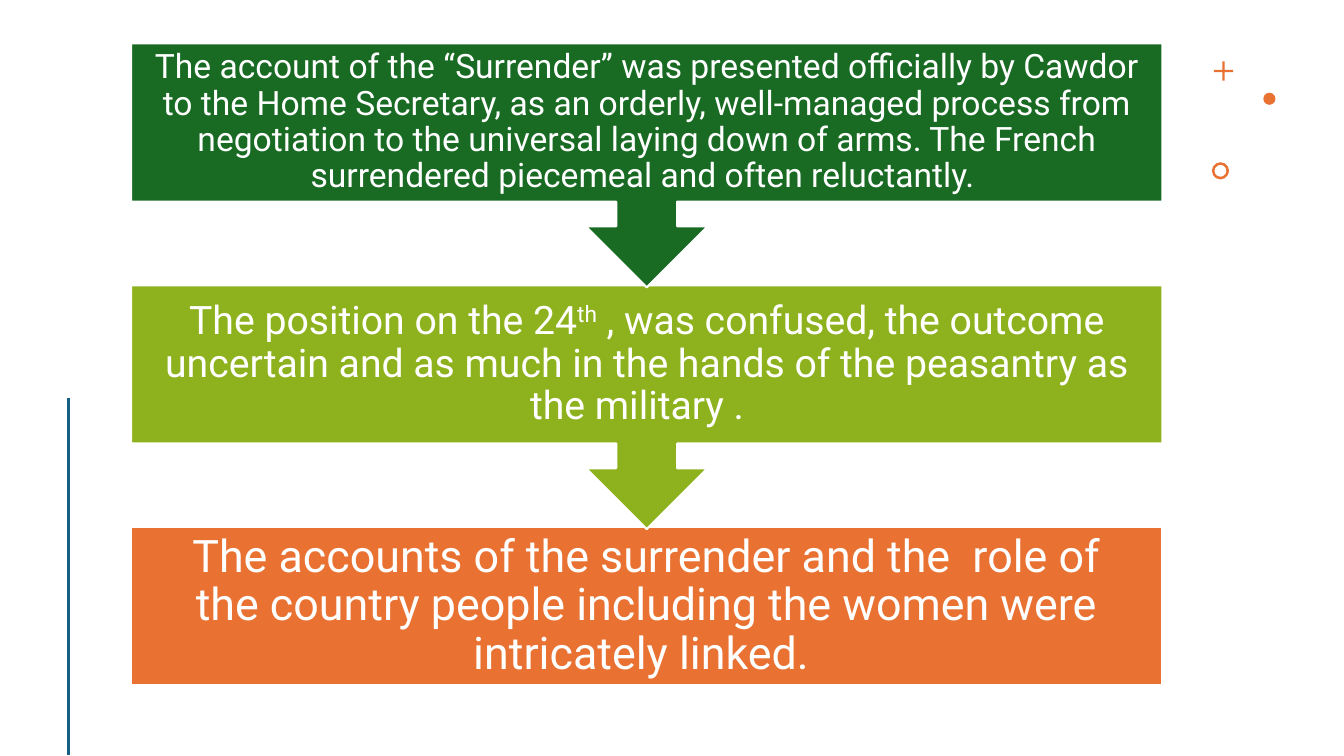
import pptx
import pptx.dml.color
import pptx.enum.shapes
import pptx.enum.text
import pptx.util
from lxml import etree
from pptx.enum.shapes import MSO_SHAPE
from pptx.util import Inches, Pt

WHITE = pptx.dml.color.RGBColor(0xFF, 0xFF, 0xFF)
GREEN = pptx.dml.color.RGBColor(0x19, 0x6B, 0x24)
LIME = pptx.dml.color.RGBColor(0x8E, 0xB2, 0x1E)
ORANGE = pptx.dml.color.RGBColor(0xE9, 0x71, 0x32)
BLUE = pptx.dml.color.RGBColor(0x15, 0x60, 0x82)

STEP_LEFT, STEP_TOP, STEP_WIDTH, STEP_PITCH = 1.3, 0.43, 10.23, 2.4
BOX_HEIGHT, CALLOUT_HEIGHT = 1.57, 2.42

# Fill, text size, inset and text runs; every second run is superscript.
STEPS = [
    (GREEN, 24, 0.19, [
        "The account of the “Surrender” was presented officially by Cawdor to the "
        "Home Secretary, as an orderly, well-managed process from negotiation to the "
        "universal laying down of arms. The French surrendered piecemeal and often "
        "reluctantly. "]),
    (LIME, 28, 0.22, [
        "The position on the 24", "th",
        " , was confused, the outcome uncertain and as much in the hands of the "
        "peasantry as the military .  "]),
    (ORANGE, 32, 0.25, [
        "The accounts of the surrender and the  role of the country people including "
        "the women were intricately linked. "]),
]


def add_filled_shape(slide, preset, left, top, width, height, fill):
    shape = slide.shapes.add_shape(
        preset, Inches(left), Inches(top), Inches(width), Inches(height))
    shape.shadow.inherit = False
    shape.fill.solid()
    shape.fill.fore_color.rgb = fill
    shape.line.fill.background()
    return shape


def write_step_text(step, size, inset, texts):
    frame = step.text_frame
    frame.word_wrap = True
    frame.vertical_anchor = pptx.enum.text.MSO_ANCHOR.MIDDLE
    frame.margin_left = frame.margin_right = Inches(inset)
    frame.margin_top = frame.margin_bottom = Inches(inset)
    paragraph = frame.paragraphs[0]
    paragraph.alignment = pptx.enum.text.PP_ALIGN.CENTER
    paragraph.line_spacing = 0.9
    for position, text in enumerate(texts):
        run = paragraph.add_run()
        run.text = text
        run.font.name = "Roboto"
        run.font.size = Pt(size)
        run.font.color.rgb = WHITE
        if position % 2:
            run.font._element.set("baseline", "30000")


def add_step(slide, index):
    """Add one step: a callout pointing to the next step, or a plain box at the end."""
    fill, size, inset, texts = STEPS[index]
    is_last = index == len(STEPS) - 1
    preset = MSO_SHAPE.RECTANGLE if is_last else MSO_SHAPE.DOWN_ARROW_CALLOUT
    height = BOX_HEIGHT if is_last else CALLOUT_HEIGHT
    step = add_filled_shape(slide, preset, STEP_LEFT, STEP_TOP + index * STEP_PITCH,
                            STEP_WIDTH, height, fill)
    step.line.color.rgb = WHITE
    step.line.width = Pt(1.5)
    if not is_last:
        step.adjustments[3] = BOX_HEIGHT / CALLOUT_HEIGHT
    write_step_text(step, size, inset, texts)


def add_corner_ornaments(slide):
    plus = add_filled_shape(slide, MSO_SHAPE.CROSS, 12.04, 0.61, 0.19, 0.19, ORANGE)
    plus.adjustments[0] = 0.44
    add_filled_shape(slide, MSO_SHAPE.OVAL, 12.53, 0.92, 0.12, 0.12, ORANGE)
    ring = add_filled_shape(slide, MSO_SHAPE.DONUT, 12.02, 1.61, 0.17, 0.17, ORANGE)
    ring.adjustments[0] = 0.15


def add_side_rule(slide):
    rule = slide.shapes.add_connector(
        pptx.enum.shapes.MSO_CONNECTOR.STRAIGHT,
        Inches(0.68), Inches(3.95), Inches(0.68), Inches(7.49))
    rule.line.color.rgb = BLUE
    rule.line.width = Pt(2)
    etree.SubElement(rule._element.spPr, pptx.oxml.ns.qn("a:effectLst"))


def main():
    deck = pptx.Presentation()
    deck.slide_width, deck.slide_height = Inches(13.33), Inches(7.5)
    slide = deck.slides.add_slide(deck.slide_layouts[6])
    add_corner_ornaments(slide)
    add_side_rule(slide)
    # Later steps go behind, so each arrow tip stays in front of the next box.
    for index in reversed(range(len(STEPS))):
        add_step(slide, index)
    deck.save("out.pptx")


if __name__ == "__main__":
    main()
